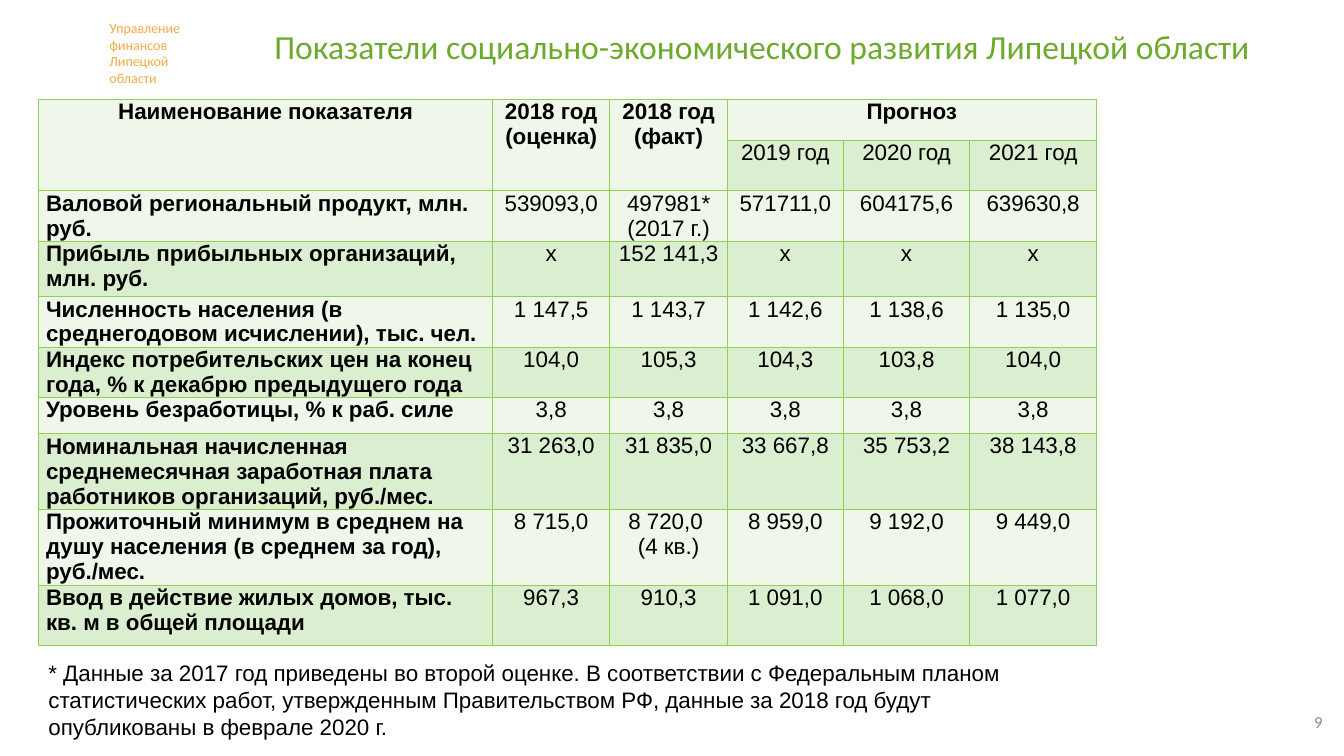
from lxml import etree
from pptx import Presentation
from pptx.dml.color import RGBColor
from pptx.enum.text import MSO_ANCHOR, MSO_AUTO_SIZE, PP_ALIGN
from pptx.oxml.ns import qn
from pptx.util import Cm, Pt

LEFT, CENTER, RIGHT = PP_ALIGN.LEFT, PP_ALIGN.CENTER, PP_ALIGN.RIGHT
TOP, MIDDLE = MSO_ANCHOR.TOP, MSO_ANCHOR.MIDDLE
NO_AUTOFIT = MSO_AUTO_SIZE.NONE

BLACK = RGBColor(0x00, 0x00, 0x00)
ORANGE = RGBColor(0xF2, 0xAC, 0x44)
GREEN = RGBColor(0x6E, 0xAA, 0x2E)
GRAY = RGBColor(0x8C, 0x8C, 0x8C)
BORDER = RGBColor(0x92, 0xD0, 0x50)
PALE_BAND = RGBColor(0xEE, 0xF7, 0xE9)
GREEN_BAND = RGBColor(0xDC, 0xEE, 0xD0)

COLUMN_WIDTHS = (11.43, 2.96, 2.96, 2.92, 3.19, 3.19)
ROW_HEIGHTS = (1.04, 1.27, 1.27, 1.4, 1.27, 1.27, 0.91, 1.91, 1.91, 1.52)
TABLE_LINE = Pt(17.8)
HEADINGS = ("Наименование показателя", "2018 год (оценка)", "2018 год (факт)", "Прогноз")
FORECAST_YEARS = ("2019 год", "2020 год", "2021 год")
INDICATORS = (
    ("Валовой региональный продукт, млн. руб.",
     "539093,0", "497981*\n(2017 г.)", "571711,0", "604175,6", "639630,8"),
    ("Прибыль прибыльных организаций, млн. руб.",
     "х", "152 141,3", "х", "х", "х"),
    ("Численность населения (в среднегодовом исчислении), тыс. чел.",
     "1 147,5", "1 143,7", "1 142,6", "1 138,6", "1 135,0"),
    ("Индекс потребительских цен на конец года, % к декабрю предыдущего года",
     "104,0", "105,3", "104,3", "103,8", "104,0"),
    ("Уровень безработицы, % к раб. силе",
     "3,8", "3,8", "3,8", "3,8", "3,8"),
    ("Номинальная начисленная среднемесячная заработная плата "
     "работников организаций, руб./мес.",
     "31 263,0", "31 835,0", "33 667,8", "35 753,2", "38 143,8"),
    ("Прожиточный минимум в среднем на душу населения (в среднем за год), руб./мес.",
     "8 715,0", "8 720,0 \n(4 кв.)", "8 959,0", "9 192,0", "9 449,0"),
    ("Ввод в действие жилых домов, тыс. кв. м в общей площади",
     "967,3", "910,3", "1 091,0", "1 068,0", "1 077,0"),
)


def write_text(frame, text, *, size=16, font="Arial", color=BLACK, bold=False,
               align=LEFT, spacing=None):
    """Fill a text frame, one paragraph for each line of the text."""
    for index, line in enumerate(text.split("\n")):
        paragraph = frame.paragraphs[0] if index == 0 else frame.add_paragraph()
        paragraph.alignment = align
        if spacing:
            paragraph.line_spacing = spacing
        run = paragraph.add_run()
        run.text = line
        run.font.size = Pt(size)
        run.font.name = font
        run.font.bold = bold
        run.font.color.rgb = color


class IndicatorSlide:
    def __init__(self, presentation):
        self.slide = presentation.slides.add_slide(presentation.slide_layouts[5])
        self.border_color = BORDER
        self.border_width = Pt(1)

    def title(self, text, left, top, width, height, **style):
        heading = self.slide.shapes.title
        heading.left, heading.top = Cm(left), Cm(top)
        heading.width, heading.height = Cm(width), Cm(height)
        heading.text_frame.auto_size = NO_AUTOFIT
        heading.text_frame.vertical_anchor = MIDDLE
        write_text(heading.text_frame, text, **style)

    def label(self, text, left, top, width, height, anchor=TOP, **style):
        box = self.slide.shapes.add_textbox(Cm(left), Cm(top), Cm(width), Cm(height))
        box.text_frame.word_wrap = True
        box.text_frame.vertical_anchor = anchor
        write_text(box.text_frame, text, **style)

    def table(self, left, top, widths, heights):
        frame = self.slide.shapes.add_table(
            len(heights), len(widths), Cm(left), Cm(top), Cm(sum(widths)), Cm(sum(heights)))
        grid = frame.table
        grid.first_row = grid.horz_banding = False
        for column, width in zip(grid.columns, widths):
            column.width = Cm(width)
        for row_index, (row, height) in enumerate(zip(grid.rows, heights)):
            row.height = Cm(height)
            for cell in row.cells:
                self.format_cell(cell, GREEN_BAND if row_index % 2 else PALE_BAND)
        return grid

    def format_cell(self, cell, fill):
        cell.margin_left = cell.margin_right = Cm(0.18)
        cell.margin_top = cell.margin_bottom = 0
        properties = cell._tc.get_or_add_tcPr()
        for side in ("a:lnL", "a:lnR", "a:lnT", "a:lnB"):
            line = etree.SubElement(properties, qn(side), w=str(self.border_width))
            solid = etree.SubElement(line, qn("a:solidFill"))
            etree.SubElement(solid, qn("a:srgbClr"), val=str(self.border_color))
        cell.fill.solid()
        cell.fill.fore_color.rgb = fill


def fill_indicators(grid):
    def write_cell(row, column, text, **style):
        write_text(grid.cell(row, column).text_frame, text, spacing=TABLE_LINE, **style)

    for column in range(3):
        grid.cell(0, column).merge(grid.cell(1, column))
    grid.cell(0, 3).merge(grid.cell(0, 5))
    for column, heading in enumerate(HEADINGS):
        write_cell(0, column, heading, bold=True, align=CENTER)
    for column, year in enumerate(FORECAST_YEARS, 3):
        write_cell(1, column, year, align=CENTER)
    for row, (indicator, *values) in enumerate(INDICATORS, 2):
        write_cell(row, 0, indicator, bold=True)
        for column, value in enumerate(values, 1):
            write_cell(row, column, value, align=CENTER)
    grid.cell(7, 0).vertical_anchor = MIDDLE


def main():
    presentation = Presentation()
    presentation.slide_width, presentation.slide_height = Cm(33.87), Cm(19.05)
    page = IndicatorSlide(presentation)
    page.label("Управление финансов Липецкой области", 2.51, 0.36, 2.46, 1.96,
               size=10, font="Calibri", color=ORANGE)
    page.title("Показатели социально-экономического развития Липецкой области",
               4.93, 0.64, 28.55, 1.19, size=24, font="Calibri", color=GREEN,
               align=CENTER, spacing=0.9)
    fill_indicators(page.table(0.98, 2.5, COLUMN_WIDTHS, ROW_HEIGHTS))
    page.label("* Данные за 2017 год приведены во второй оценке. В соответствии с "
               "Федеральным планом статистических работ, утвержденным Правительством РФ, "
               "данные за 2018 год будут опубликованы в феврале 2020 г.",
               0.97, 16.48, 26.37, 2.31)
    page.label("9", 25.68, 17.68, 7.9, 1.02, anchor=MIDDLE,
               size=12, font="Calibri", color=GRAY, align=RIGHT)
    presentation.save("out.pptx")


if __name__ == "__main__":
    main()
